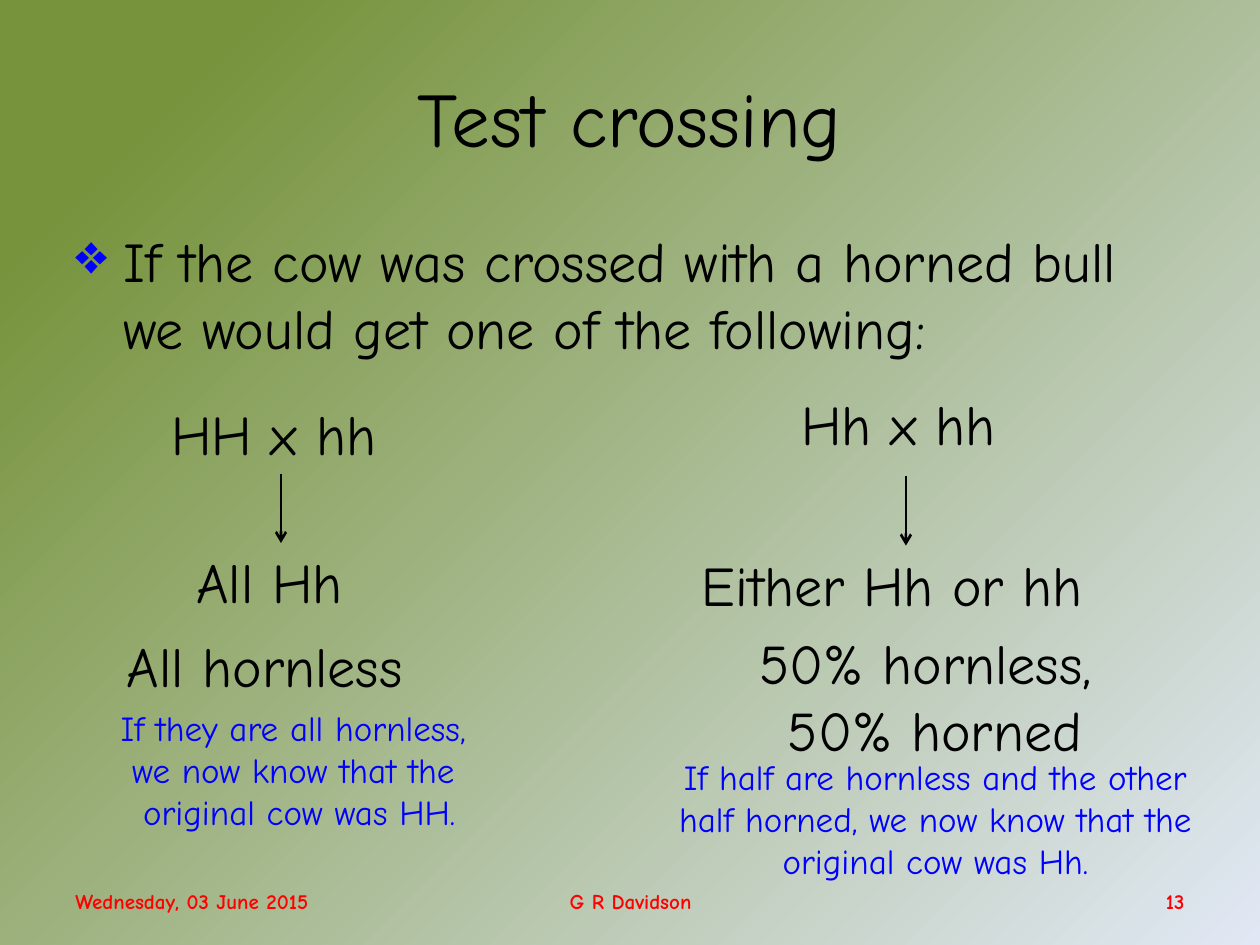
from dataclasses import dataclass

from lxml import etree
from pptx import Presentation
from pptx.dml.color import RGBColor
from pptx.enum.shapes import MSO_CONNECTOR
from pptx.enum.text import MSO_ANCHOR, MSO_AUTO_SIZE, PP_ALIGN
from pptx.oxml.ns import qn
from pptx.util import Inches, Pt

LEFT, CENTER, RIGHT = PP_ALIGN.LEFT, PP_ALIGN.CENTER, PP_ALIGN.RIGHT
TOP, MIDDLE = MSO_ANCHOR.TOP, MSO_ANCHOR.MIDDLE
GROW, FIXED = MSO_AUTO_SIZE.SHAPE_TO_FIT_TEXT, MSO_AUTO_SIZE.NONE
STRAIGHT = MSO_CONNECTOR.STRAIGHT
TITLE_ONLY = 5
COLUMNS, ROWS = 100, 75


@dataclass(frozen=True)
class Theme:
    font: str = "Comic Neue"
    ink: str = "000000"
    accent: str = "0000FF"
    footer: str = "FF0000"
    field_dark: str = "77933C"
    field_light: str = "E1E8F5"
    title_size: int = 44
    body_size: int = 32
    note_size: int = 20
    footer_size: int = 12
    arrow_width: float = 1.5


class SlideBuilder:
    """Places elements on a grid of COLUMNS by ROWS cells."""

    def __init__(self, deck, theme):
        self.theme = theme
        self.slide = deck.slides.add_slide(deck.slide_layouts[TITLE_ONLY])
        self.cell_width = deck.slide_width / COLUMNS
        self.cell_height = deck.slide_height / ROWS

    def place(self, column, row, columns, rows):
        return (round(column * self.cell_width), round(row * self.cell_height),
                round(columns * self.cell_width), round(rows * self.cell_height))

    def background(self):
        fill = self.slide.background.fill
        fill.gradient()
        fill.gradient_angle = 315
        colors = (self.theme.field_dark, self.theme.field_light)
        for stop, position, color in zip(fill.gradient_stops, (0.12, 1), colors):
            stop.position = position
            stop.color.rgb = RGBColor.from_string(color)

    def set_lines(self, frame, lines, size, color, align, anchor, bold=False):
        frame.vertical_anchor = anchor
        for index, line in enumerate(lines):
            paragraph = frame.add_paragraph() if index else frame.paragraphs[0]
            paragraph.alignment = align
            run = paragraph.add_run()
            run.text = line
            run.font.name = self.theme.font
            run.font.size = Pt(size)
            run.font.bold = bold
            run.font.color.rgb = RGBColor.from_string(color)

    def title(self, text, area):
        heading = self.slide.shapes.title
        heading.left, heading.top, heading.width, heading.height = self.place(*area)
        heading.text_frame.auto_size = FIXED
        self.set_lines(heading.text_frame, [text], self.theme.title_size,
                       self.theme.ink, CENTER, MIDDLE)

    def text(self, lines, area, size, color, align=LEFT, anchor=TOP,
             bold=False, wrap=False):
        frame = self.slide.shapes.add_textbox(*self.place(*area)).text_frame
        frame.word_wrap = wrap
        frame.auto_size = FIXED if wrap else GROW
        self.set_lines(frame, lines, size, color, align, anchor, bold)
        return frame

    def bullet(self, text, area):
        frame = self.text([text], area, self.theme.body_size, self.theme.ink,
                          wrap=True)
        paragraph = frame.paragraphs[0]
        paragraph.space_before = Pt(0.2 * self.theme.body_size)
        properties = paragraph._p.get_or_add_pPr()
        hang = Inches(0.38)
        properties.set("marL", str(hang))
        properties.set("indent", str(-hang))
        color = etree.SubElement(properties, qn("a:buClr"))
        etree.SubElement(color, qn("a:srgbClr"), val=self.theme.accent)
        etree.SubElement(properties, qn("a:buChar"), char="❖")

    def down_arrow(self, column, row, rows):
        x, top, _, length = self.place(column, row, 0, rows)
        arrow = self.slide.shapes.add_connector(STRAIGHT, x, top, x, top + length)
        arrow.line.color.rgb = RGBColor.from_string(self.theme.ink)
        arrow.line.width = Pt(self.theme.arrow_width)
        properties = arrow._element.spPr
        etree.SubElement(properties.find(qn("a:ln")), qn("a:tailEnd"), type="arrow")
        etree.SubElement(properties, qn("a:effectLst"))


# Each cross: steps as (lines, area, alignment), arrow start, conclusion
CROSSES = [
    {
        "steps": [
            (["HH x hh"], (12.6, 31.2, 19.5, 6.4), LEFT),
            (["All Hh"], (14.6, 43, 15.1, 6.4), LEFT),
            (["All hornless"], (9.1, 49.6, 26.6, 6.4), LEFT),
        ],
        "arrow": (22.3, 37.6),
        "conclusion": (["If they are all hornless, ", "we now know that the ",
                        "original cow was HH."], (6.7, 55.6, 34.1, 11.1)),
    },
    {
        "steps": [
            (["Hh x hh"], (62.6, 30.4, 18.6, 6.4), LEFT),
            (["Either Hh or hh"], (54.7, 43.2, 35.2, 6.4), LEFT),
            (["50% hornless, ", "50% horned"], (57.9, 49.4, 32.6, 11.8), CENTER),
        ],
        "arrow": (71.9, 37.8),
        "conclusion": (["If half are hornless and the other",
                        " half horned, we now know that the ",
                        "original cow was Hh."], (49.9, 59.5, 48.7, 11.1)),
    },
]

# Footer entries: text, first column, columns, alignment
FOOTER = [
    ("Wednesday, 03 June 2015", 5, 33.2, LEFT),
    ("G R Davidson", 34.2, 31.7, CENTER),
    ("13", 71.7, 23.3, RIGHT),
]


def main():
    deck = Presentation()
    deck.slide_width, deck.slide_height = Inches(10), Inches(7.5)
    theme = Theme()
    page = SlideBuilder(deck, theme)

    # Heading and introduction
    page.background()
    page.title("Test crossing", (5, 3, 90, 12.5))
    page.bullet("If the cow was crossed with a horned bull we would get "
                "one of the following:", (5, 17.5, 90, 13.7))

    # The two possible crosses
    for cross in CROSSES:
        for lines, area, align in cross["steps"]:
            page.text(lines, area, theme.body_size, theme.ink, align)
        page.down_arrow(*cross["arrow"], rows=5.5)
        conclusion, area = cross["conclusion"]
        page.text(conclusion, area, theme.note_size, theme.accent, CENTER)

    # Footer line
    for entry, column, columns, align in FOOTER:
        page.text([entry], (column, 69.5, columns, 4), theme.footer_size,
                  theme.footer, align, MIDDLE, bold=True, wrap=True)

    deck.save("out.pptx")


if __name__ == "__main__":
    main()
